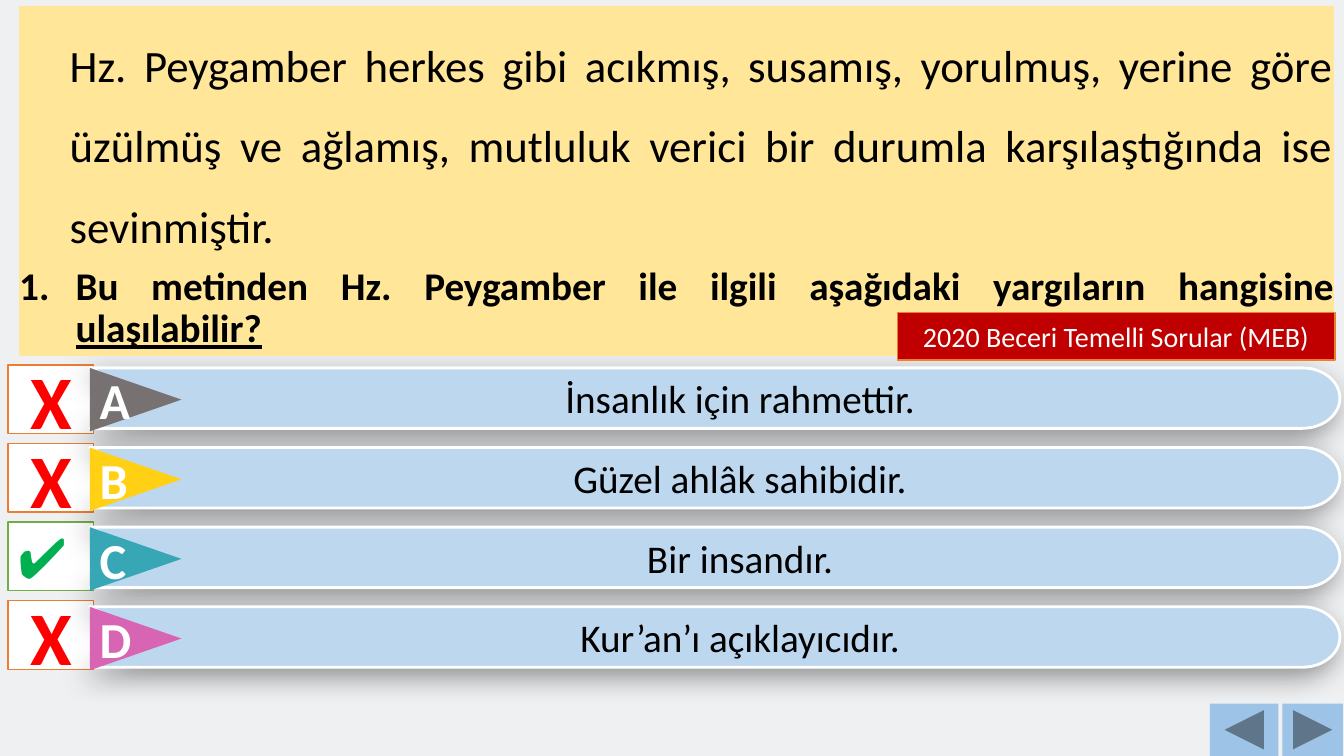
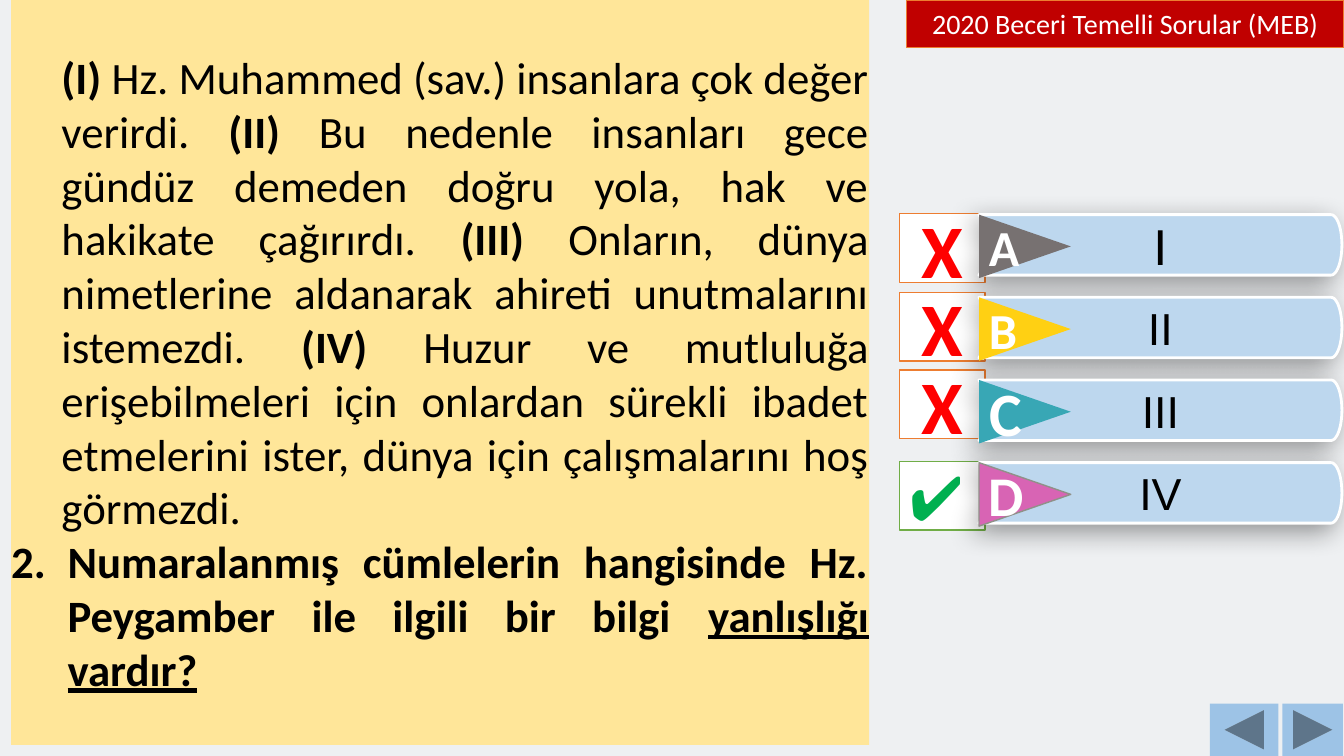
"""Build two multiple-choice question slides with marked answers."""
from dataclasses import dataclass
from math import cos, pi, sin

from lxml import etree
from pptx import Presentation
from pptx.dml.color import RGBColor
from pptx.enum.shapes import MSO_SHAPE
from pptx.enum.text import MSO_ANCHOR, MSO_AUTO_SIZE, PP_ALIGN
from pptx.oxml.ns import qn
from pptx.util import Inches, Pt

RECT = MSO_SHAPE.RECTANGLE
TRIANGLE = MSO_SHAPE.ISOSCELES_TRIANGLE
PREVIOUS = MSO_SHAPE.ACTION_BUTTON_BACK_OR_PREVIOUS
NEXT = MSO_SHAPE.ACTION_BUTTON_FORWARD_OR_NEXT
LEFT, CENTER, JUSTIFY = PP_ALIGN.LEFT, PP_ALIGN.CENTER, PP_ALIGN.JUSTIFY
MIDDLE = MSO_ANCHOR.MIDDLE
NO_FIT = MSO_AUTO_SIZE.NONE

COLORS = {
    "background": "EEF0F2", "question": "FFE699", "badge": "C00000",
    "bar": "BDD7EE", "nav": "9DC3E6", "white": "FFFFFF", "black": "000000",
    "wrong": "FF0000", "right": "00B050", "orange": "ED7D31", "green": "70AD47",
    "A": "777171", "B": "FFD013", "C": "38A7B5", "D": "D864B4", "edge": "909189",
}
FONT = "Calibri"
BADGE_TEXT = "2020 Beceri Temelli Sorular (MEB)"
BADGE_SIZE = (4.34, 0.47)
MARK_SIZE = (0.85, 0.68)
BAR_HEIGHT = 0.6
LETTER_SIZE = (0.63, 0.91)
LETTER_OFFSET = 0.14
ARC_STEPS = 24


@dataclass
class Answer:
    """One answer row."""
    letter: str
    text: str
    mark_top: float
    correct: bool = False
    size: int = 28
    letter_size: int = 36
    letter_align: PP_ALIGN = CENTER
    edge: bool = False


@dataclass
class Answers:
    """The block of answer rows and its geometry."""
    rows: list
    mark_left: float
    bar_left: float
    bar_top: float
    bar_width: float
    step: float
    font: str = FONT
    indent: float = 0
    check_size: int = 40


def rgb(name):
    """Return a palette colour."""
    return RGBColor.from_string(COLORS[name])


def paint(shape, fill, line=None, width=1):
    """Set fill and outline."""
    shape.fill.solid()
    shape.fill.fore_color.rgb = rgb(fill)
    if line:
        shape.line.color.rgb = rgb(line)
        shape.line.width = Pt(width)
    else:
        shape.line.fill.background()


def style(paragraph, size, color, align, bold=False, font=FONT):
    """Format a whole paragraph."""
    paragraph.alignment = align
    paragraph.font.size = Pt(size)
    paragraph.font.name = font
    paragraph.font.bold = bold
    paragraph.font.color.rgb = rgb(color)


def add_box(slide, kind, box, fill, line=None):
    """Add a flat preset shape."""
    shape = slide.shapes.add_shape(kind, *map(Inches, box))
    shape.shadow.inherit = False
    paint(shape, fill, line)
    return shape


def write(shape, text, size, color, align=CENTER, bold=False, font=FONT):
    """Write one vertically centred paragraph into a shape."""
    frame = shape.text_frame
    frame.word_wrap = True
    frame.vertical_anchor = MIDDLE
    frame.text = text
    style(frame.paragraphs[0], size, color, align, bold, font)
    return frame.paragraphs[0]


def place(placeholder, box):
    """Position a placeholder and bring it to the front."""
    placeholder.left, placeholder.top, placeholder.width, placeholder.height = map(Inches, box)
    placeholder.element.getparent().append(placeholder.element)
    placeholder.text_frame.auto_size = NO_FIT


def set_indent(paragraph, margin, first=0):
    """Set left margin and first-line indent."""
    properties = paragraph._p.get_or_add_pPr()
    properties.set("marL", str(Inches(margin)))
    properties.set("indent", str(Inches(first)))
    return properties


def add_shadow(shape):
    """Give a shape a soft shadow towards the lower left."""
    shape.shadow.inherit = False
    effects = shape.element.spPr.find(qn("a:effectLst"))
    shadow = etree.SubElement(effects, qn("a:outerShdw"), blurRad=str(Pt(20)),
                              dist=str(Pt(7)), dir="8100000", algn="tr", rotWithShape="0")
    color = etree.SubElement(shadow, qn("a:srgbClr"), val=COLORS["black"])
    etree.SubElement(color, qn("a:alpha"), val="40000")


def add_bar(slide, left, top, width):
    """Draw an answer bar with a notched left and a rounded right end."""
    cap, notch, radius = 0.03 * width, 0.05 * width, BAR_HEIGHT / 2
    angles = [pi * (i / ARC_STEPS - 0.5) for i in range(ARC_STEPS + 1)]
    points = [(left + width - cap + cap * cos(a), top + radius + radius * sin(a))
              for a in angles]
    points += [(left, top + BAR_HEIGHT), (left + notch, top + radius)]
    builder = slide.shapes.build_freeform(Inches(left), Inches(top))
    builder.add_line_segments([(Inches(x), Inches(y)) for x, y in points], close=True)
    bar = builder.convert_to_shape()
    paint(bar, "bar", "white", 2)
    add_shadow(bar)
    return bar


def add_mark(slide, answer, left, check_size):
    """Draw the box with a tick or a cross."""
    box = (left, answer.mark_top, *MARK_SIZE)
    if answer.correct:
        mark = add_box(slide, RECT, box, "white", "green")
        write(mark, "✔", check_size, "right", LEFT)
    else:
        mark = add_box(slide, RECT, box, "white", "orange")
        write(mark, "X", 54, "wrong", bold=True)


def add_letter(slide, answer, left, top):
    """Draw the pointed letter label over the start of a bar."""
    box = (left + LETTER_OFFSET, top - LETTER_OFFSET, *LETTER_SIZE)
    pointer = add_box(slide, TRIANGLE, box, answer.letter, "edge" if answer.edge else None)
    pointer.rotation = 90
    write(pointer, answer.letter, answer.letter_size, "white", answer.letter_align, True)
    pointer.text_frame._txBody.bodyPr.set("vert", "vert270")


def add_answers(slide, block):
    """Draw all marks, then the answer bars with their letters."""
    for answer in block.rows:
        add_mark(slide, answer, block.mark_left, block.check_size)
    for i, answer in enumerate(block.rows):
        top = block.bar_top + i * block.step
        bar = add_bar(slide, block.bar_left, top, block.bar_width)
        label = write(bar, answer.text, answer.size, "black", font=block.font)
        set_indent(label, block.indent)
        add_letter(slide, answer, block.bar_left, top)


def add_question(slide, box, number, passage, prompt, underlined,
                 prompt_size=32, spacing=(1, 1), gap=0):
    """Fill the body placeholder with the passage and the numbered question."""
    body = slide.placeholders[1]
    place(body, box)
    paint(body, "question")
    frame = body.text_frame
    frame.word_wrap = True
    frame.vertical_anchor = MIDDLE
    frame.margin_left = frame.margin_right = frame.margin_top = frame.margin_bottom = 0

    story = frame.paragraphs[0]
    etree.SubElement(set_indent(story, 0.5), qn("a:buNone"))
    question = frame.add_paragraph()
    properties = set_indent(question, 0.56, -0.56)
    etree.SubElement(properties, qn("a:buFont"), typeface=FONT)
    etree.SubElement(properties, qn("a:buAutoNum"), type="arabicPeriod", startAt=str(number))

    for i, text in enumerate(passage):
        run = story.add_run()
        run.text = text
        if i % 2:
            run.font.bold = True
    for text in (prompt, underlined):
        run = question.add_run()
        run.text = text
    run.font.underline = True

    style(story, 32, "black", JUSTIFY)
    style(question, prompt_size, "black", JUSTIFY, True)
    story.line_spacing, question.line_spacing = spacing
    story.space_before, question.space_before = Pt(0), Pt(gap)


def add_badge(slide, left, top):
    """Turn the title placeholder into the rounded source badge."""
    badge = slide.shapes.title
    place(badge, (left, top, *BADGE_SIZE))
    outline = etree.Element(qn("a:prstGeom"), prst="roundRect")
    guides = etree.SubElement(outline, qn("a:avLst"))
    etree.SubElement(guides, qn("a:gd"), name="adj", fmla="val 12100")
    badge.element.spPr.insert(1, outline)
    paint(badge, "badge", "orange")
    write(badge, BADGE_TEXT, 20, "white")


def add_navigation(slide):
    """Draw the back and forward buttons."""
    add_box(slide, PREVIOUS, (12, 6.98, 0.68, 0.52), "nav")
    add_box(slide, NEXT, (12.72, 6.98, 0.6, 0.52), "nav")


def add_slide(deck, answers, question, badge):
    """Add one complete question slide."""
    slide = deck.slides.add_slide(deck.slide_layouts[1])
    add_answers(slide, answers)
    add_navigation(slide)
    add_question(slide, **question)
    add_badge(slide, *badge)


def main():
    """Build and save the deck."""
    deck = Presentation()
    deck.slide_width, deck.slide_height = Inches(13.33), Inches(7.5)
    backdrop = deck.slide_master.background.fill
    backdrop.solid()
    backdrop.fore_color.rgb = rgb("background")

    add_slide(
        deck,
        Answers([
            Answer("A", "İnsanlık için rahmettir.", 3.62),
            Answer("B", "Güzel ahlâk sahibidir.", 4.4),
            Answer("C", "Bir insandır.", 5.18, correct=True),
            Answer("D", "Kur’an’ı açıklayıcıdır.", 5.96),
        ], mark_left=0.08, bar_left=0.89, bar_top=3.65, bar_width=12.4, step=0.79, indent=0.5),
        dict(box=(0.19, 0.06, 13.04, 3.47), number=1,
             passage=["Hz. Peygamber herkes gibi acıkmış, susamış, yorulmuş, yerine göre "
                      "üzülmüş ve ağlamış, mutluluk verici bir durumla karşılaştığında ise "
                      "sevinmiştir."],
             prompt="Bu metinden Hz. Peygamber ile ilgili aşağıdaki yargıların hangisine ",
             underlined="ulaşılabilir?", prompt_size=28, spacing=(1.5, 0.9), gap=10),
        (8.9, 3.1))

    add_slide(
        deck,
        Answers([
            Answer("A", "I", 2.12, size=36),
            Answer("B", "II", 2.9, size=32),
            Answer("C", "III", 3.67, size=32, letter_size=44, letter_align=LEFT),
            Answer("D", "IV", 4.58, correct=True, size=32, letter_size=40, edge=True),
        ], mark_left=8.92, bar_left=9.71, bar_top=2.13, bar_width=3.6, step=0.82,
            font="Arial", check_size=44),
        dict(box=(0.11, 0, 8.51, 7.39), number=2,
             passage=["", "(I) ", "Hz. Muhammed (sav.) insanlara çok değer verirdi. ",
                      "(II) ", "Bu nedenle insanları gece gündüz demeden doğru yola, hak ve "
                      "hakikate çağırırdı. ",
                      "(III) ", "Onların, dünya nimetlerine aldanarak ahireti unutmalarını "
                      "istemezdi. ",
                      "(IV) ", "Huzur ve mutluluğa erişebilmeleri için onlardan sürekli ibadet "
                      "etmelerini ister, dünya için çalışmalarını hoş görmezdi."],
             prompt="Numaralanmış cümlelerin hangisinde Hz. Peygamber ile ilgili bir bilgi ",
             underlined="yanlışlığı vardır?"),
        (8.99, 0))

    deck.save("out.pptx")


if __name__ == "__main__":
    main()
